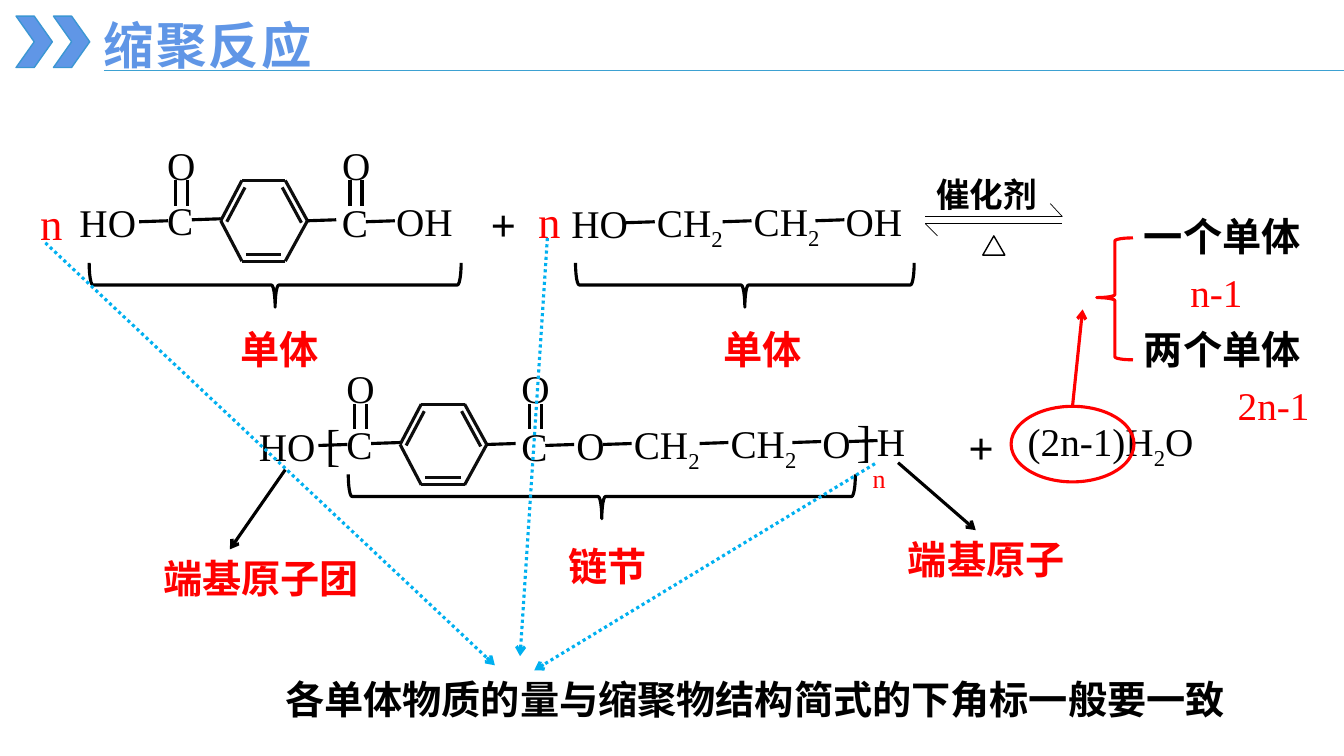
import dataclasses

import lxml.etree
import pptx
import pptx.dml.color
import pptx.enum.dml
import pptx.enum.shapes
import pptx.enum.text
import pptx.oxml.ns
import pptx.util

Pt = pptx.util.Pt
qn = pptx.oxml.ns.qn
SHAPES = pptx.enum.shapes.MSO_SHAPE


@dataclasses.dataclass(frozen=True)
class Theme:
    black: str = "000000"
    ring: str = "0D0D0D"
    red: str = "FF0000"
    link: str = "00B0F0"
    title: str = "6096E6"
    chevron_edge: str = "3B96D3"
    rule: str = "3DA1D2"
    white: str = "FFFFFF"
    latin: str = "Times New Roman"
    chinese: str = "Noto Sans CJK SC"
    title_size: int = 36
    large: int = 32
    body: int = 28
    small: int = 24
    stroke: float = 2.25
    thin: float = 0.5


THEME = Theme()


def rgb(code):
    return pptx.dml.color.RGBColor.from_string(code)


@dataclasses.dataclass
class Area:
    """Part of the slide, drawn on in points from its own top left corner."""
    slide: object
    left: float
    top: float

    def inner(self, x, y):
        return Area(self.slide, self.left + x, self.top + y)

    def text(self, words, x, y, width, size=THEME.body, color=THEME.black,
             bold=False, wrap=True, latin=THEME.latin, spacing=0):
        """Write words; underscores switch subscript on and off."""
        label = self.slide.shapes.add_textbox(
            Pt(self.left + x), Pt(self.top + y), Pt(width), Pt(size * 1.2 + 7.2))
        frame = label.text_frame
        frame.word_wrap = wrap
        frame.auto_size = pptx.enum.text.MSO_AUTO_SIZE.SHAPE_TO_FIT_TEXT
        paragraph = frame.paragraphs[0]
        for index, piece in enumerate(words.split("_")):
            if piece:
                run = paragraph.add_run()
                run.text = piece
                if index % 2:
                    run._r.get_or_add_rPr().set("baseline", "-25000")
        font = paragraph.font
        font.size, font.bold, font.name = Pt(size), bold, latin
        font.color.rgb = rgb(color)
        defaults = paragraph._p.find(".//" + qn("a:defRPr"))
        lxml.etree.SubElement(defaults, qn("a:ea"), typeface=THEME.chinese)
        if spacing:
            defaults.set("spc", str(int(spacing * 100)))

    def line(self, start, end, color=THEME.black, width=THEME.stroke,
             arrow=False, dotted=False):
        (x1, y1), (x2, y2) = start, end
        stroke = self.slide.shapes.add_connector(
            pptx.enum.shapes.MSO_CONNECTOR.STRAIGHT,
            Pt(self.left + x1), Pt(self.top + y1),
            Pt(self.left + x2), Pt(self.top + y2))
        stroke.line.color.rgb = rgb(color)
        stroke.line.width = Pt(width)
        if dotted:
            stroke.line.dash_style = pptx.enum.dml.MSO_LINE.ROUND_DOT
        if arrow:
            lxml.etree.SubElement(stroke.line._get_or_add_ln(),
                                  qn("a:tailEnd"), type="arrow")
        lxml.etree.SubElement(stroke._element.spPr, qn("a:effectLst"))

    def shape(self, kind, x, y, width, height, edge, fill=None,
              stroke=THEME.stroke):
        figure = self.slide.shapes.add_shape(
            kind, Pt(self.left + x), Pt(self.top + y), Pt(width), Pt(height))
        figure.shadow.inherit = False
        if fill:
            figure.fill.solid()
            figure.fill.fore_color.rgb = rgb(fill)
        else:
            figure.fill.background()
        figure.line.color.rgb = rgb(edge)
        figure.line.width = Pt(stroke)
        return figure

    def caption(self, words, x, y, width):
        self.text(words, x, y, width, color=THEME.red, bold=True, wrap=False)

    def bond(self, x, y):
        self.line((x, y), (x + 20.6, y - 0.7))

    def brace_below(self, x, y, width, depth=31.7):
        """Draw a brace that points down, with its top left corner at x, y."""
        brace = self.shape(SHAPES.LEFT_BRACE, x + (width - depth) / 2,
                           y + (depth - width) / 2, depth, width, THEME.black)
        brace.rotation = 270


def draw_header(area):
    for x in (11.5, 38.2):
        area.shape(SHAPES.CHEVRON, x, 11.5, 25.9, 36.7, THEME.chevron_edge,
                   THEME.title, 1)
    area.line((74.2, 50.4), (960, 50.4), THEME.rule, THEME.thin)
    area.text("缩聚反应", 67, 6.5, 198, THEME.title_size, THEME.title, True,
              latin=THEME.chinese, spacing=1.5)


def draw_terephthalyl(area):
    """HO, a carbonyl, the benzene ring, a carbonyl and an open bond."""
    ring = [(108, 60.5), (123.1, 31.7), (154.1, 31.7),
            (169.9, 60.5), (154.1, 89.3), (123.1, 89.3)]
    for start, end in zip(ring, ring[1:] + ring[:1]):
        area.line(start, end, THEME.ring)
    for start, end in [((126, 84.4), (151.2, 84.4)),
                       ((151.9, 36.7), (165.6, 61.9)),
                       ((125.3, 36.7), (112.3, 61.2))]:
        area.line(start, end, THEME.ring)
    for x, y in [(49.7, 61.2), (87.3, 59.8), (169.9, 60.5), (211.7, 61.2)]:
        area.bond(x, y)
    area.text("HO", 0, 41, 60)
    for x, carbon_top in [(62.6, 39.6), (187.5, 41)]:
        area.text("O", x, 0, 36.7)
        area.text("C", x, carbon_top, 21.6)
        for gap in (12.8, 21.4):
            area.line((x + gap, 31.7), (x + gap, 49.7))


def draw_glycol(area):
    """Two CH2 units with the three bonds around them."""
    for x, y in [(0, 0), (69.1, -0.7), (135.4, -1.4)]:
        area.bond(x, y)
    for x, y in [(15.1, -20.9), (84.2, -21.6)]:
        area.text("CH_2", x, y, 71.3)


def draw_reactants(area):
    draw_terephthalyl(area.inner(29.7, 0.2))
    area.text("OH", 255.8, 40.5, 55.4)
    area.text("HO", 381, 42, 55.4)
    draw_glycol(area.inner(427.1, 62.1))
    area.text("OH", 576.9, 40.5, 59)
    for x, y in [(1.6, 39.1), (357.3, 37.6)]:
        area.text("n", x, y, 55.4, THEME.large, THEME.red)
    area.text("+", 323.4, 39.8, 55.4, THEME.large, bold=True)
    for x, width, caption_x in [(43.7, 265.7, 144.9), (391.1, 241.9, 489.8)]:
        area.brace_below(x, 90.7, width)
        area.caption("单体", caption_x, 132, 70.6)


def draw_conditions(area):
    area.text("催化剂", 0.7, 0, 100.8, THEME.small, bold=True)
    area.shape(SHAPES.ISOSCELES_TRIANGLE, 41, 47.5, 15.8, 13.7, THEME.black,
               THEME.white, 1)
    for start, end in [((0, 33.8), (97.9, 33.8)), ((97.9, 33.8), (89.2, 24.4)),
                       ((0, 38.8), (97.9, 38.8)), ((8.6, 47.5), (0, 38.8))]:
        area.line(start, end, width=THEME.thin)


def draw_polymer(area):
    draw_terephthalyl(area.inner(68.8, 0))
    area.text("O", 295.6, 40.4, 36.7)
    draw_glycol(area.inner(321.6, 60.5))
    area.text("O", 471.3, 38.9, 36.7)
    area.bond(497.2, 58.4)
    area.text("[", 116.4, 36.8, 36.7, THEME.large)
    area.text("]", 495.8, 33.9, 36.7, THEME.large)
    area.text("_n", 507.3, 48.3, 36.7, THEME.large, THEME.red)
    area.text("H", 510.2, 37.5, 60)
    area.brace_below(139.8, 81.8, 362.2)
    area.line((94.8, 78.5), (55.2, 135.4), arrow=True)
    area.line((532.5, 73.5), (588, 121.7), arrow=True)
    area.caption("端基原子团", 0.4, 135.4, 154.8)
    area.caption("端基原子", 532.5, 121.7, 126.7)
    area.caption("链节", 289.9, 126.8, 70.6)


def draw_water_count(area):
    area.text("+", 0.7, 147.9, 55.4, THEME.large, bold=True)
    area.text("(2n-1)H_2_O", 43, 146.5, 140.6, wrap=False)
    area.shape(SHAPES.OVAL, 38.2, 142.2, 87.8, 54, THEME.red)
    area.line((82.1, 142.2), (89.3, 73), THEME.red, arrow=True)
    cases = area.shape(SHAPES.LEFT_BRACE, 99.4, 21.9, 25.9, 87.1, THEME.red)
    cases.adjustments[1] = 0.49
    area.text("一个单体", 126, 0.3, 133.2, bold=True)
    area.text("n-1", 159.1, 39.9, 51.8, color=THEME.red, wrap=False)
    area.text("两个单体", 126, 81, 133.2, bold=True)
    area.text("2n-1", 193, 120.6, 65.5, color=THEME.red, wrap=False)


def draw_conclusion(area):
    for start, end in [((0.4, 3.5), (321.5, 305.2)),
                       ((359, 0), (339.5, 298.7)),
                       ((593, 161.2), (349.6, 308.8))]:
        area.line(start, end, THEME.link, arrow=True, dotted=True)
    area.text("各单体物质的量与缩聚物结构简式的下角标一般要一致",
              164.6, 308.8, 697, bold=True)


def main():
    deck = pptx.Presentation()
    deck.slide_width, deck.slide_height = Pt(960), Pt(540)
    slide = deck.slides.add_slide(deck.slide_layouts[6])
    for draw, left, top in [(draw_header, 0, 0), (draw_reactants, 20, 97),
                            (draw_conditions, 661, 121),
                            (draw_polymer, 109, 257),
                            (draw_water_count, 684, 148),
                            (draw_conclusion, 32, 170)]:
        draw(Area(slide, left, top))
    deck.save("out.pptx")


if __name__ == "__main__":
    main()
